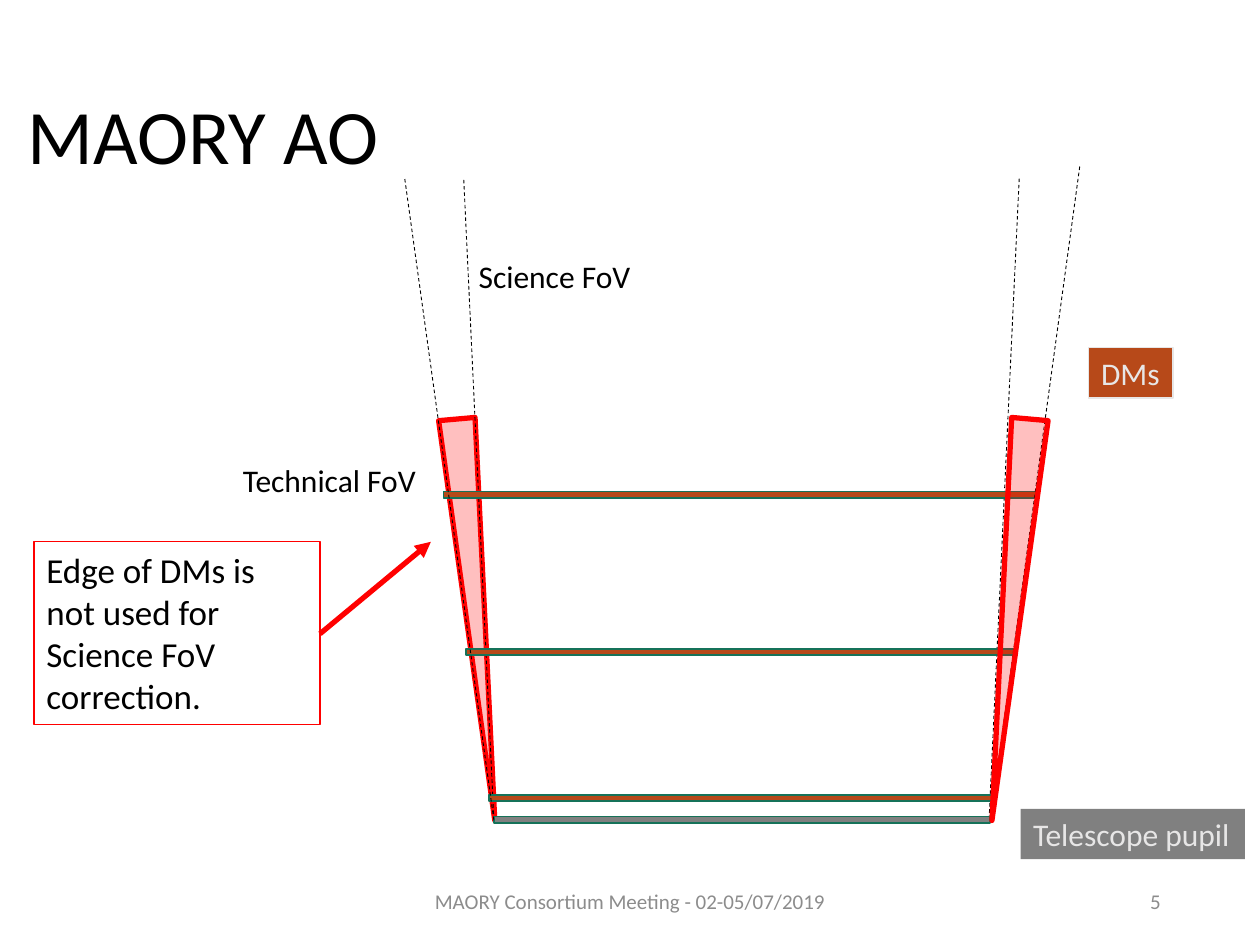
from lxml import etree
from pptx import Presentation
from pptx.dml.color import RGBColor
from pptx.enum import dml, shapes, text
from pptx.oxml.ns import qn
from pptx.util import Inches, Pt

THEME = {
    "font": "Calibri",
    "ink": "000000", "muted": "8C8C8C", "pale": "E7E6E6",
    "alert": "FF0000", "mirror": "B74919", "pupil": "808080", "edge": "157259",
    "title": 44, "callout": 20, "label": 18, "footer": 12,
}
LEFT, CENTER, RIGHT = text.PP_ALIGN.LEFT, text.PP_ALIGN.CENTER, text.PP_ALIGN.RIGHT
TOP, MIDDLE = text.MSO_ANCHOR.TOP, text.MSO_ANCHOR.MIDDLE

LABELS = [
    ("MAORY AO", (0.12, 0.38, 8.62, 1.45), "title", "ink", LEFT, MIDDLE, True),
    ("MAORY Consortium Meeting - 02-05/07/2019", (3.31, 6.95, 3.38, 0.4),
     "footer", "muted", CENTER, MIDDLE, True),
    ("5", (7.06, 6.95, 2.25, 0.4), "footer", "muted", RIGHT, MIDDLE, True),
    ("Technical FoV", (1.83, 3.61, 1.59, 0.4), "label", "ink", LEFT, TOP, False),
    ("Science FoV", (3.7, 1.99, 1.42, 0.4), "label", "ink", LEFT, TOP, False),
]
CALLOUT = ("Edge of DMs is not used for Science FoV correction.", (0.27, 4.3, 2.27, 1.45))
CALLOUT_ARROW = ((2.54, 5.03), (3.42, 4.3))
SCIENCE_RAYS = [((3.92, 6.51), (3.68, 1.41)), ((7.85, 6.5), (8.09, 1.4))]
TECHNICAL_RAYS = [((3.92, 6.51), (3.21, 1.4)), ((7.86, 6.51), (8.57, 1.32))]
PLATE_HEIGHT = 0.05
PLATES = [
    (3.7, 5.15, 4.37, "mirror"),
    (3.88, 6.31, 4.02, "mirror"),
    (3.52, 3.9, 4.72, "mirror"),
    (3.92, 6.48, 3.94, "pupil"),
]
LEGEND = [
    ("DMs", (8.64, 2.76, 0.67, 0.4), "mirror", "pale"),
    ("Telescope pupil", (8.1, 6.42, 1.78, 0.4), "pupil", None),
]
WEDGE_TOP, WEDGE_WIDTH, WEDGE_HEIGHT = 3.32, 0.29, 3.2
LEFT_WEDGE = (3.62, -5, ("flipV",))
RIGHT_WEDGE = (7.89, 5, ("flipH", "flipV"))


def color(name):
    return RGBColor.from_string(THEME[name])


def write(shape, words, size, ink, align=LEFT, anchor=TOP, wrap=True):
    frame = shape.text_frame
    frame.text = words
    frame.word_wrap = wrap
    frame.vertical_anchor = anchor
    paragraph = frame.paragraphs[0]
    paragraph.alignment = align
    if size == "title":
        paragraph.line_spacing = 0.9
    font = paragraph.runs[0].font
    font.name, font.size = THEME["font"], Pt(THEME[size])
    font.color.rgb = color(ink)


def add_block(slide, box, fill=None, line=None, width=0.75,
              kind=shapes.MSO_SHAPE.RECTANGLE):
    block = slide.shapes.add_shape(kind, *map(Inches, box))
    block.shadow.inherit = False
    if fill:
        block.fill.solid()
        block.fill.fore_color.rgb = color(fill)
    else:
        block.fill.background()
    if line:
        block.line.color.rgb = color(line)
        block.line.width = Pt(width)
    else:
        block.line.fill.background()
    return block


def add_line(slide, start, end, ink, width):
    line = slide.shapes.add_connector(
        shapes.MSO_CONNECTOR.STRAIGHT, *map(Inches, start + end))
    line.line.color.rgb = color(ink)
    line.line.width = Pt(width)
    etree.SubElement(line._element.spPr, qn("a:effectLst"))
    return line


def add_rays(slide, rays):
    for start, end in rays:
        ray = add_line(slide, start, end, "ink", 0.5)
        ray.line.dash_style = dml.MSO_LINE.DASH


def add_wedge(slide, left, rotation, flips):
    wedge = add_block(slide, (left, WEDGE_TOP, WEDGE_WIDTH, WEDGE_HEIGHT), "alert",
                      "alert", 3, shapes.MSO_SHAPE.ISOSCELES_TRIANGLE)
    wedge.adjustments[0] = 0.578
    wedge.rotation = rotation
    properties = wedge._element.spPr
    for flip in flips:
        properties.find(qn("a:xfrm")).set(flip, "1")
    tint = properties.find(qn("a:solidFill"))[0]
    etree.SubElement(tint, qn("a:alpha"), val="25000")


def main():
    deck = Presentation()
    deck.slide_width, deck.slide_height = Inches(10), Inches(7.5)
    slide = deck.slides.add_slide(deck.slide_layouts[6])

    for words, box, *style in LABELS:
        write(slide.shapes.add_textbox(*map(Inches, box)), words, *style)

    add_wedge(slide, *LEFT_WEDGE)
    words, box = CALLOUT
    write(add_block(slide, box, line="alert"), words, "callout", "ink")
    arrow = add_line(slide, *CALLOUT_ARROW, "alert", 3)
    etree.SubElement(arrow.line._get_or_add_ln(), qn("a:tailEnd"), type="triangle")

    add_rays(slide, SCIENCE_RAYS)
    for left, top, width, fill in PLATES:
        add_block(slide, (left, top, width, PLATE_HEIGHT), fill, "edge", 1)
    add_rays(slide, TECHNICAL_RAYS)
    for words, box, fill, line in LEGEND:
        write(add_block(slide, box, fill, line), words, "label", "pale", wrap=False)
    add_wedge(slide, *RIGHT_WEDGE)

    deck.save("out.pptx")


if __name__ == "__main__":
    main()
